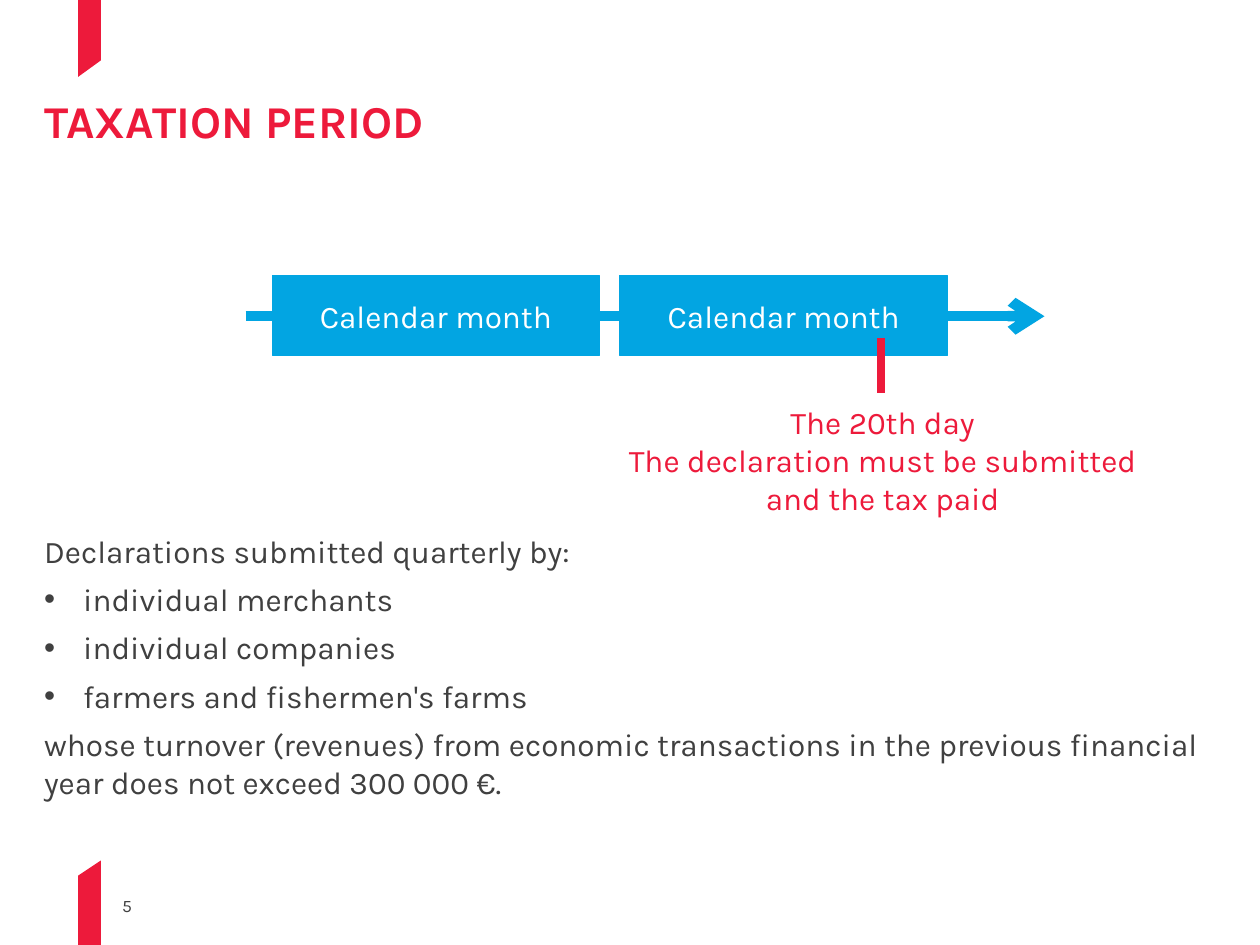
from dataclasses import dataclass

from lxml import etree
from pptx import Presentation
from pptx.dml.color import RGBColor
from pptx.enum.shapes import MSO_CONNECTOR, MSO_SHAPE
from pptx.enum.text import MSO_ANCHOR, PP_ALIGN
from pptx.oxml.ns import qn
from pptx.util import Inches, Pt

RECT = MSO_SHAPE.RECTANGLE
STRAIGHT = MSO_CONNECTOR.STRAIGHT
TOP, MIDDLE, BOTTOM = MSO_ANCHOR.TOP, MSO_ANCHOR.MIDDLE, MSO_ANCHOR.BOTTOM
LEFT, CENTER = PP_ALIGN.LEFT, PP_ALIGN.CENTER

FONT = "Karla"
RED, BLUE, GREY, WHITE = "ED1A3B", "02A5E2", "404040", "FFFFFF"
MARGIN = 0.35
INDENT = 0.31


@dataclass
class Para:
    text: str
    bullet: bool = False


@dataclass
class TextStyle:
    size: float = 18
    color: str = GREY
    bold: bool = False
    align: PP_ALIGN = LEFT
    anchor: MSO_ANCHOR = TOP
    inset: float = 0
    space_after: float = 0
    line_spacing: float = 1.0


def rgb(value: str) -> RGBColor:
    return RGBColor.from_string(value)


def add_bullet(p) -> None:
    pPr = p._p.get_or_add_pPr()
    pPr.set("marL", str(Inches(INDENT)))
    pPr.set("indent", str(-Inches(INDENT)))
    etree.SubElement(pPr, qn("a:buFont")).set("typeface", "Arial")
    etree.SubElement(pPr, qn("a:buChar")).set("char", "•")


def write_text(sp, paras: list[Para], style: TextStyle) -> None:
    tf = sp.text_frame
    inset = Inches(style.inset)
    frame_format = {
        "word_wrap": True, "vertical_anchor": style.anchor,
        "margin_left": inset, "margin_right": inset,
        "margin_top": inset, "margin_bottom": inset,
    }
    for name, value in frame_format.items():
        setattr(tf, name, value)
    para_format = {
        "alignment": style.align, "line_spacing": style.line_spacing,
        "space_after": Pt(style.space_after),
    }
    font_format = {"name": FONT, "size": Pt(style.size), "bold": style.bold}
    for i, para in enumerate(paras):
        p = tf.add_paragraph() if i else tf.paragraphs[0]
        for name, value in para_format.items():
            setattr(p, name, value)
        if para.bullet:
            add_bullet(p)
        r = p.add_run()
        r.text = para.text
        for name, value in font_format.items():
            setattr(r.font, name, value)
        r.font.color.rgb = rgb(style.color)


def add_text(s, x: float, y: float, w: float, h: float,
             paras: list[Para], style: TextStyle) -> None:
    sp = s.shapes.add_textbox(Inches(x), Inches(y), Inches(w), Inches(h))
    write_text(sp, paras, style)


def add_ribbon(s, points: list[tuple[float, float]]) -> None:
    """Draw a red ribbon with a slanted end through points given in inches."""
    corners = [(Inches(x), Inches(y)) for x, y in points]
    builder = s.shapes.build_freeform(*corners[0])
    builder.add_line_segments(corners[1:], close=True)
    sp = builder.convert_to_shape()
    sp.shadow.inherit = False
    sp.fill.solid()
    sp.fill.fore_color.rgb = rgb(RED)
    sp.line.fill.background()


def add_line(s, x1: float, y1: float, x2: float, y2: float,
             color: str, width: float, arrow: bool = False) -> None:
    line = s.shapes.add_connector(
        STRAIGHT, Inches(x1), Inches(y1), Inches(x2), Inches(y2))
    line.line.color.rgb = rgb(color)
    line.line.width = Pt(width)
    if arrow:
        ln = line.line._get_or_add_ln()
        etree.SubElement(ln, qn("a:tailEnd")).set("type", "arrow")
    etree.SubElement(line._element.spPr, qn("a:effectLst"))


def add_month(s, x: float, y: float, w: float, h: float) -> None:
    sp = s.shapes.add_shape(RECT, Inches(x), Inches(y), Inches(w), Inches(h))
    sp.shadow.inherit = False
    sp.fill.solid()
    sp.fill.fore_color.rgb = rgb(BLUE)
    sp.line.color.rgb = rgb(BLUE)
    sp.line.width = Pt(0.5)
    write_text(sp, [Para("Calendar month")],
               TextStyle(color=WHITE, align=CENTER, anchor=MIDDLE, inset=0.08))


def main() -> None:
    prs = Presentation()
    prs.slide_width, prs.slide_height = Inches(10), Inches(7.5)
    s = prs.slides.add_slide(prs.slide_layouts[6])

    add_ribbon(s, [(0.62, 6.95), (0.62, 7.5), (0.8, 7.5), (0.8, 6.83)])
    add_text(s, 0.97, 7.1, 0.45, 0.17, [Para("5")],
             TextStyle(size=10, anchor=BOTTOM))
    add_ribbon(s, [(0.8, 0.48), (0.8, 0), (0.62, 0), (0.62, 0.61)])

    add_text(s, MARGIN, 0.82, 9.26, 0.35, [Para("TAXATION PERIOD")],
             TextStyle(size=26, color=RED, bold=True, line_spacing=0.8))

    add_line(s, 1.95, 2.51, 8.29, 2.51, BLUE, 6, arrow=True)
    add_text(s, MARGIN, 4.22, 9.29, 2.15, [
        Para("Declarations submitted quarterly by:"),
        Para("individual merchants", bullet=True),
        Para("individual companies", bullet=True),
        Para("farmers and fishermen's farms", bullet=True),
        Para("whose turnover (revenues) from economic transactions in the "
             "previous financial year does not exceed 300 000 €."),
    ], TextStyle(space_after=6))

    month_w, month_gap = 2.6, 0.16
    for i in range(2):
        add_month(s, 2.16 + i * (month_w + month_gap), 2.19, month_w, 0.63)

    add_line(s, 6.99, 2.68, 6.99, 3.12, RED, 4.5)
    add_text(s, 4.92, 3.2, 4.17, 0.91, [
        Para("The 20th day"),
        Para("The declaration must be submitted and the tax paid"),
    ], TextStyle(color=RED, align=CENTER))

    prs.save("out.pptx")


if __name__ == "__main__":
    main()
